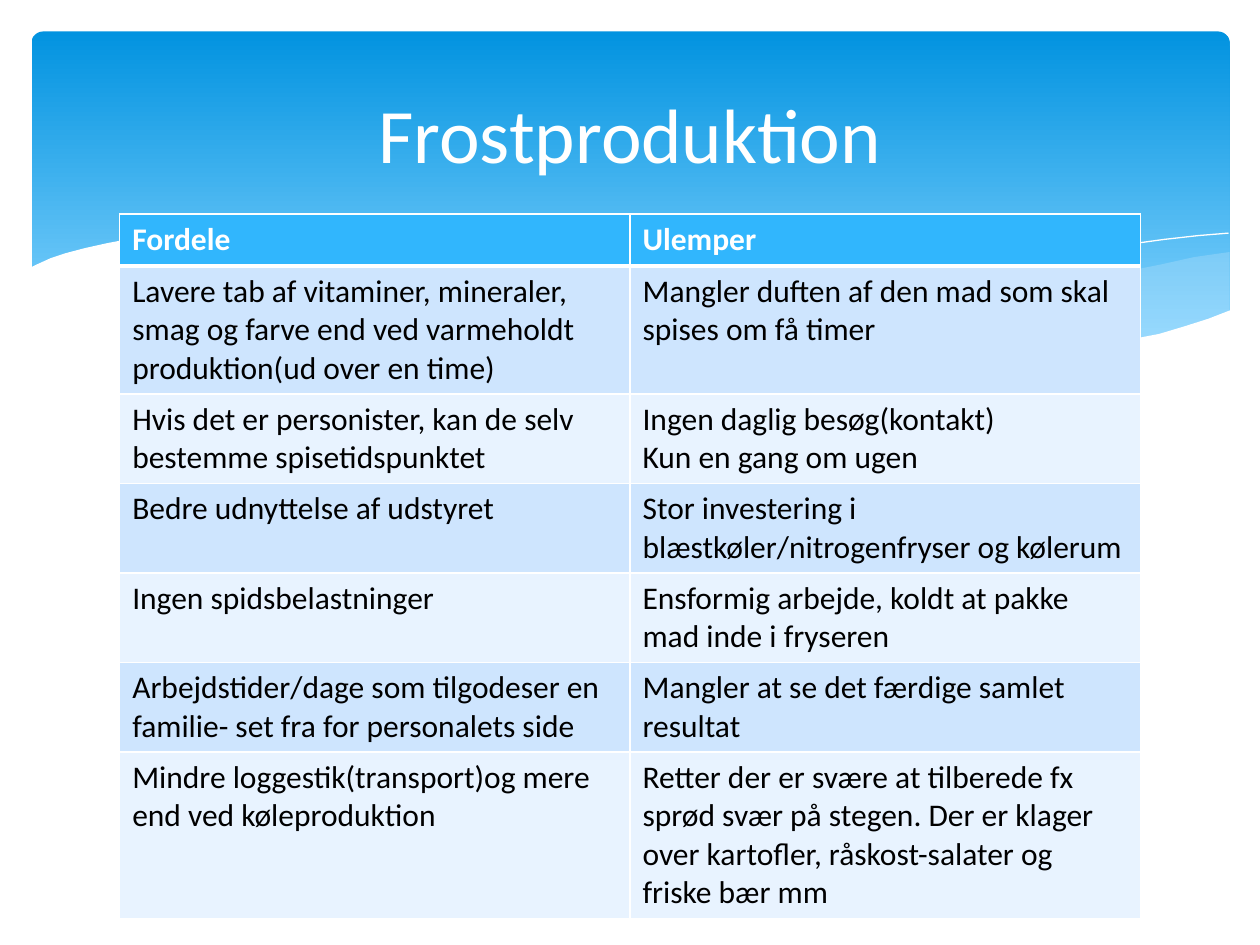
from dataclasses import dataclass

from lxml.etree import SubElement
from pptx import Presentation
from pptx.dml.color import RGBColor
from pptx.enum.shapes import MSO_SHAPE as Preset
from pptx.enum.text import MSO_ANCHOR as Anchor, PP_ALIGN as Align
from pptx.oxml.ns import qn
from pptx.util import Inches, Pt


@dataclass(frozen=True)
class Theme:
    """Colours and type sizes of the slide."""
    font: str = "Calibri"
    title_size: int = 44
    table_size: int = 18
    white: str = "FFFFFF"
    black: str = "000000"
    sky_top: str = "0293E0"
    sky_bottom: str = "83D3FE"
    mist: str = "C6E7FC"
    header: str = "31B6FD"
    bands: tuple = ("CEE5FE", "E8F3FF")


@dataclass(frozen=True)
class Box:
    """A region of the slide in inches."""
    left: float
    top: float
    width: float
    height: float

    def emu(self):
        """Return the four lengths for placing an object."""
        return [Inches(v) for v in (self.left, self.top, self.width, self.height)]


THEME = Theme()

RIGHT_MIST = [
    (9.76, 2), (9.48, 2.04), (9.21, 2.1), (8.91, 2.16), (8.61, 2.23), (8.05, 2.37),
    (7.53, 2.48), (7.06, 2.57), (6.61, 2.65), (6.91, 2.69), (7.19, 2.72), (7.45, 2.75),
    (7.69, 2.77), (8.03, 2.78), (8.35, 2.77), (8.63, 2.75), (8.89, 2.72), (9.13, 2.67),
    (9.35, 2.62), (9.49, 2.57), (9.63, 2.52), (9.76, 2.47)]
MIDDLE_MIST = [
    (8.93, 2.73), (8.66, 2.69), (8.07, 2.6), (7.41, 2.47), (6.68, 2.31), (6.29, 2.22),
    (5.98, 2.14), (5.69, 2.08), (5.41, 2.03), (5.14, 1.98), (4.89, 1.94), (4.42, 1.89),
    (3.99, 1.86), (3.61, 1.85), (3.28, 1.87), (2.86, 1.91), (3.23, 1.96), (3.62, 2.03),
    (4.04, 2.11), (4.49, 2.22), (5.3, 2.4), (5.84, 2.52), (6.34, 2.61), (6.8, 2.68),
    (7.22, 2.74), (7.61, 2.77), (7.96, 2.78), (8.28, 2.78), (8.57, 2.77), (8.93, 2.73)]
FALLING_LINE = [
    (3.09, 1.95), (3.28, 1.92), (3.53, 1.89), (3.87, 1.87), (4.16, 1.87), (4.5, 1.88),
    (4.89, 1.9), (5.33, 1.94), (5.82, 2), (6.36, 2.08), (6.95, 2.19), (7.6, 2.33),
    (8.31, 2.51), (9.07, 2.72)]
RISING_LINE = [
    (6.13, 2.57), (6.53, 2.46), (6.95, 2.35), (7.48, 2.23), (8.06, 2.1), (8.66, 1.99),
    (8.95, 1.94), (9.24, 1.9), (9.51, 1.87), (9.75, 1.85)]
WHITE_WAVE = [
    (9.77, 2.46), (9.59, 2.53), (9.4, 2.59), (9.2, 2.65), (8.99, 2.69), (8.75, 2.73),
    (8.5, 2.75), (8.09, 2.77), (7.78, 2.76), (7.44, 2.74), (7.08, 2.7), (6.68, 2.65),
    (6.26, 2.58), (5.79, 2.5), (5.29, 2.39), (4.75, 2.27), (4.18, 2.13), (3.65, 2.02),
    (3.16, 1.94), (2.71, 1.88), (2.3, 1.85), (1.93, 1.84), (1.61, 1.84), (1.32, 1.86),
    (1.06, 1.89), (0.85, 1.93), (0.67, 1.97), (0.52, 2.01), (0.4, 2.05), (0.29, 2.1),
    (0.23, 2.13), (0.23, 3.29), (9.77, 3.29)]

PROS_AND_CONS = [
    ("Fordele", "Ulemper"),
    ("Lavere tab af vitaminer, mineraler, smag og farve end ved varmeholdt "
     "produktion(ud over en time)",
     "Mangler duften af den mad som skal spises om få timer"),
    ("Hvis det er personister, kan de selv bestemme spisetidspunktet",
     "Ingen daglig besøg(kontakt)\nKun en gang om ugen"),
    ("Bedre udnyttelse af udstyret",
     "Stor investering i blæstkøler/nitrogenfryser og kølerum"),
    ("Ingen spidsbelastninger",
     "Ensformig arbejde, koldt at pakke mad inde i fryseren"),
    ("Arbejdstider/dage som tilgodeser en familie- set fra for personalets side",
     "Mangler at se det færdige samlet resultat"),
    ("Mindre loggestik(transport)og mere end ved køleproduktion",
     "Retter der er svære at tilberede fx sprød svær på stegen. Der er klager "
     "over kartofler, råskost-salater og friske bær mm"),
]


def rgb(value):
    """Turn a hex string into a colour."""
    return RGBColor.from_string(value)


def write(frame, text, size, color, bold=False, align=Align.LEFT):
    """Fill a text frame, one paragraph for each line of text."""
    frame.text = text
    for paragraph in frame.paragraphs:
        paragraph.alignment = align
        for run in paragraph.runs:
            run.font.name = THEME.font
            run.font.size = Pt(size)
            run.font.bold = bold
            run.font.color.rgb = rgb(color)


def add_wave(slide, box, points, fill=None, opacity=100):
    """Draw a filled wave, or a hairline curve when no fill is given."""
    outline = [(Inches(box.left + x), Inches(box.top + y)) for x, y in points]
    builder = slide.shapes.build_freeform(*outline[0], scale=1.0)
    builder.add_line_segments(outline[1:], close=fill is not None)
    wave = builder.convert_to_shape()
    wave.shadow.inherit = False
    if fill is None:
        wave.fill.background()
        wave.line.color.rgb = rgb(THEME.white)
        wave.line.width = Pt(0)
        return
    wave.fill.solid()
    wave.fill.fore_color.rgb = rgb(fill)
    wave.line.fill.background()
    if opacity < 100:
        color = next(wave.element.spPr.iter(qn("a:srgbClr")))
        SubElement(color, qn("a:alpha"), val=str(opacity * 1000))


def add_banner(slide, box):
    """Draw the blue panel with the waves along its lower edge."""
    panel = Box(box.left + 0.25, box.top + 0.25, box.width - 0.49, 2.7)
    sky = slide.shapes.add_shape(Preset.ROUNDED_RECTANGLE, *panel.emu())
    sky.adjustments[0] = 0.034
    sky.shadow.inherit = False
    sky.line.fill.background()
    sky.fill.gradient()
    sky.fill.gradient_angle = 270
    stops = ((0, THEME.sky_top), (0.9, THEME.sky_bottom))
    for stop, (position, color) in zip(sky.fill.gradient_stops, stops):
        stop.position = position
        stop.color.rgb = rgb(color)
    add_wave(slide, box, RIGHT_MIST, THEME.mist, 29)
    add_wave(slide, box, MIDDLE_MIST, THEME.mist, 40)
    add_wave(slide, box, FALLING_LINE)
    add_wave(slide, box, RISING_LINE)
    add_wave(slide, box, WHITE_WAVE, THEME.white)


def set_borders(cell, **widths):
    """Give a cell white borders, with widths in points by side."""
    properties = cell._tc.get_or_add_tcPr()
    for side, width in widths.items():
        border = SubElement(properties, qn(f"a:ln{side}"), w=str(Pt(width)))
        SubElement(SubElement(border, qn("a:solidFill")), qn("a:srgbClr"), val=THEME.white)


def add_comparison(slide, box, rows):
    """Place the table of advantages and drawbacks."""
    frame = slide.shapes.add_table(len(rows), len(rows[0]), *box.emu())
    comparison = frame.table
    for r, texts in enumerate(rows):
        is_header = r == 0
        fill = THEME.header if is_header else THEME.bands[(r - 1) % 2]
        for c, text in enumerate(texts):
            cell = comparison.cell(r, c)
            set_borders(cell, L=1, R=1, T=3 if r == 1 else 1, B=3 if is_header else 1)
            cell.fill.solid()
            cell.fill.fore_color.rgb = rgb(fill)
            write(cell.text_frame, text, THEME.table_size,
                  THEME.white if is_header else THEME.black, bold=is_header)


def place_title(slide, box, text):
    """Move the title placeholder to its box, in front of the banner."""
    title = slide.shapes.title
    title.left, title.top, title.width, title.height = box.emu()
    title.text_frame.vertical_anchor = Anchor.MIDDLE
    write(title.text_frame, text, THEME.title_size, THEME.white, align=Align.CENTER)
    slide.shapes.element.append(title.element)


def main():
    """Build and save the slide."""
    deck = Presentation()
    deck.slide_width, deck.slide_height = Inches(10), Inches(7.5)
    slide = deck.slides.add_slide(deck.slide_layouts[5])
    add_banner(slide, Box(0, 0, 10, 3.29))
    add_comparison(slide, Box(0.95, 1.7, 8.1, 0.41 * len(PROS_AND_CONS)), PROS_AND_CONS)
    place_title(slide, Box(0.5, 0.37, 9, 1.37), "Frostproduktion")
    deck.save("out.pptx")


if __name__ == "__main__":
    main()
